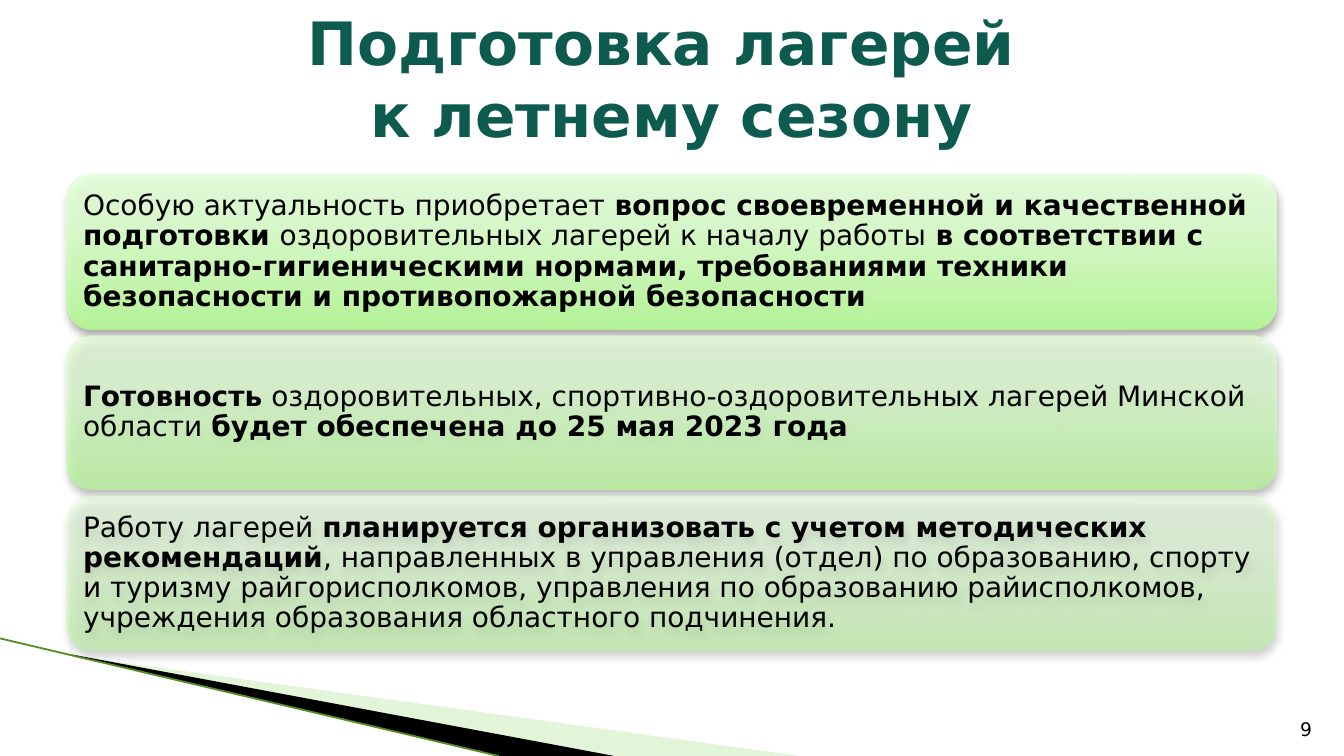
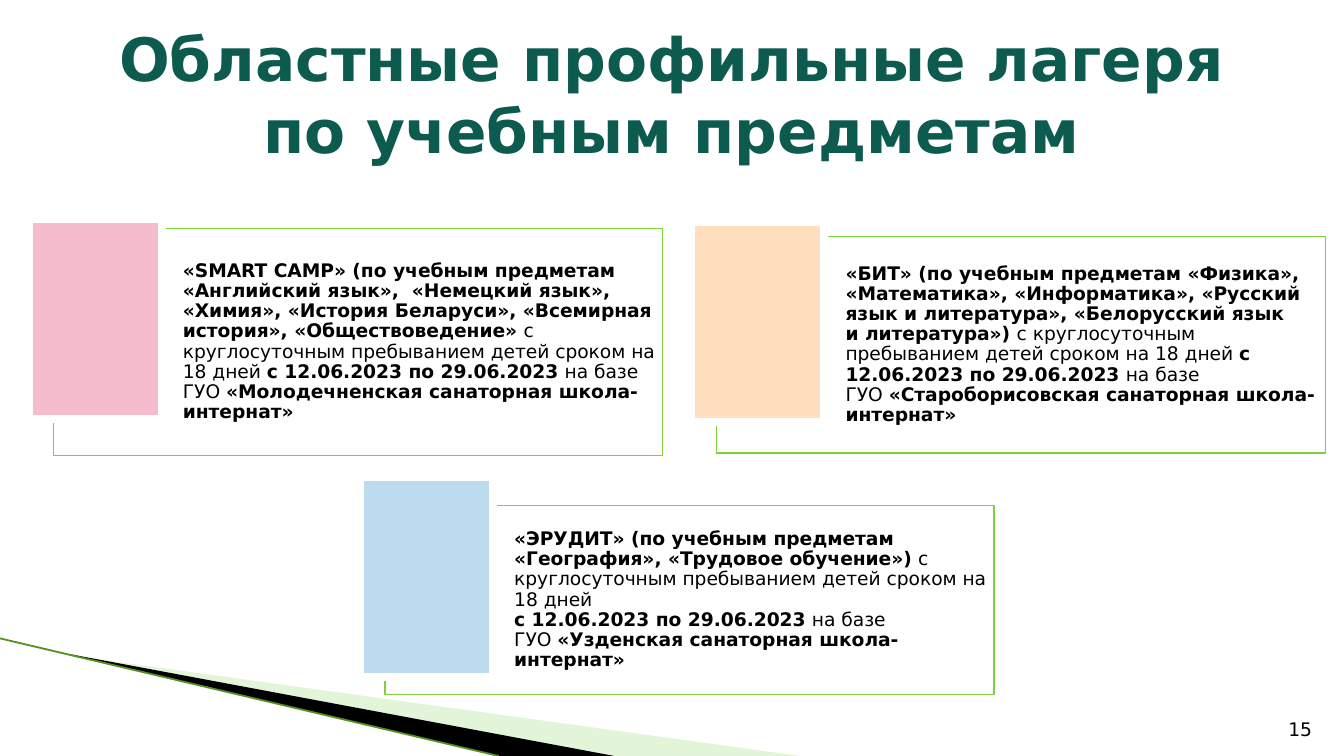
from copy import deepcopy
from pptx import Presentation
from pptx.dml.color import RGBColor
from pptx.enum.shapes import MSO_CONNECTOR as LINK, MSO_SHAPE as SHAPE
from pptx.enum.text import MSO_ANCHOR as ANCHOR, MSO_AUTO_SIZE as FIT, PP_ALIGN as ALIGN
from pptx.oxml import parse_xml
from pptx.oxml.ns import nsdecls, qn
from pptx.util import Pt

FONT = "DejaVu Sans"
HUE = {
    "title": "0D5A4F", "text": "000000", "white": "FFFFFF", "edge": "7FD13B",
    "light": "B8E7A1", "dark": "000000", "line": "568F24",
    "pink": "F5BDCB", "peach": "FFDFBD", "sky": "BDDBEE",
}
STOPS = [(0, "B5FA95"), (65, "DBFFCC"), (100, "E5FFDB")]

PREP = {
    "title": "Подготовка лагерей \nк летнему сезону",
    "top": 8, "page": "9",
    "bars": [
        (90, "Особую актуальность приобретает *вопрос своевременной и качественной подготовки *"
             "оздоровительных лагерей к началу работы *в соответствии с санитарно-гигиеническими "
             "нормами, требованиями техники безопасности и противопожарной безопасности*"),
        (70, "*Готовность* оздоровительных, спортивно-оздоровительных лагерей Минской области "
             "*будет обеспечена до 25 мая 2023 года*"),
        (50, "Работу лагерей *планируется организовать с учетом методических рекомендаций*, "
             "направленных в управления (отдел) по образованию, спорту и туризму "
             "райгорисполкомов, управления по образованию райисполкомов, учреждения "
             "образования областного подчинения."),
    ],
}
CAMPS = {
    "title": "Областные профильные лагеря по учебным предметам",
    "top": 16.5, "page": "15",
    "cards": [
        (0, 183.2, 121.7, "pink",
         "*«SMART CAMP» (по учебным предметам «Английский язык»,  «Немецкий язык», «Химия», "
         "«История Беларуси», «Всемирная история», «Обществоведение» *"
         "с круглосуточным пребыванием детей сроком на 18 дней *с 12.06.2023 по 29.06.2023 *"
         "на базе \nГУО *«Молодечненская санаторная школа-интернат»*"),
        (1, 184.7, 115.9, "peach",
         "*«БИТ» (по учебным предметам «Физика», «Математика», «Информатика», «Русский язык "
         "и литература», «Белорусский язык \nи литература») *"
         "с круглосуточным пребыванием детей сроком на 18 дней *с 12.06.2023 по 29.06.2023 *"
         "на базе \nГУО *«Староборисовская санаторная школа-интернат»*"),
        (0.5, 321.5, 101.5, "sky",
         "*«ЭРУДИТ» (по учебным предметам «География», «Трудовое обучение») *"
         "с круглосуточным пребыванием детей сроком на 18 дней \n*с 12.06.2023 по 29.06.2023 *"
         "на базе \nГУО *«Узденская санаторная школа-интернат»*"),
    ],
}

WEDGES = [
    ("light", 40, [(39.6, 351.4), (428.4, 405), (328.3, 405)]),
    ("dark", 100, [(38.2, 350.6), (329, 405), (267.8, 405), (38.9, 351.4)]),
]


def rgb(key):
    return RGBColor.from_string(HUE[key])


def box(x, y, w, h):
    return Pt(x), Pt(y), Pt(w), Pt(h)


def paint(shape, key, alpha=100, edge=None, width=0):
    shape.shadow.inherit = False
    shape.fill.solid()
    shape.fill.fore_color.rgb = rgb(key)
    if alpha < 100:
        tone = shape._element.spPr.find(qn("a:solidFill"))[0]
        tone.append(parse_xml(f'<a:alpha {nsdecls("a")} val="{alpha * 1000}"/>'))
    if edge:
        shape.line.color.rgb = rgb(edge)
        shape.line.width = Pt(width)
    else:
        shape.line.fill.background()


def glow(shape, alpha):
    props = shape._element.spPr
    stops = "".join(
        f'<a:gs pos="{pos * 1000}"><a:srgbClr val="{tone}">'
        f'<a:alpha val="{alpha * 1000}"/></a:srgbClr></a:gs>' for pos, tone in STOPS)
    grad = parse_xml(
        f'<a:gradFill {nsdecls("a")} rotWithShape="1"><a:gsLst>{stops}</a:gsLst>'
        '<a:lin ang="16200000" scaled="0"/></a:gradFill>')
    props.replace(props.find(qn("a:solidFill")), grad)
    props.find(qn("a:effectLst")).append(parse_xml(
        f'<a:outerShdw {nsdecls("a")} blurRad="{Pt(4)}" dist="{Pt(3)}" dir="5400000" '
        'rotWithShape="0"><a:srgbClr val="000000"><a:alpha val="35000"/></a:srgbClr>'
        '</a:outerShdw>'))


def write(shape, text, size, key="text", align=ALIGN.LEFT, anchor=ANCHOR.MIDDLE,
          pads=None, space=None):
    frame = shape.text_frame
    frame.word_wrap = True
    frame.auto_size = FIT.NONE
    frame.vertical_anchor = anchor
    if pads:
        (frame.margin_left, frame.margin_top,
         frame.margin_right, frame.margin_bottom) = map(Pt, pads)
    par = frame.paragraphs[0]
    par.alignment = align
    if space:
        par.line_spacing = space
    for i, part in enumerate(text.split("*")):
        for j, row in enumerate(part.split("\n")):
            if j:
                par.add_line_break()
            if row:
                run = par.add_run()
                run.text = row
                run.font.name = FONT
                run.font.size = Pt(size)
                run.font.bold = i % 2 == 1
                run.font.color.rgb = rgb(key)
    for brk in par._p.findall(qn("a:br")):
        brk.append(deepcopy(par.runs[0]._r.rPr))


def start(deck, data):
    slide = deck.slides.add_slide(deck.slide_layouts[5])
    shapes = slide.shapes
    for key, alpha, dots in WEDGES:
        dots = [(Pt(x), Pt(y)) for x, y in dots]
        pen = shapes.build_freeform(*dots[0])
        pen.add_line_segments(dots[1:], close=True)
        paint(pen.convert_to_shape(), key, alpha)
    line = shapes.add_connector(LINK.STRAIGHT, *box(0, 342, 267, 405))
    line.line.color.rgb = rgb("line")
    line.line.width = Pt(0.95)
    line._element.spPr.append(parse_xml(f'<a:effectLst {nsdecls("a")}/>'))
    title = shapes.title
    title.left, title.top, title.width, title.height = box(36, data["top"], 648, 67.5)
    write(title, f'*{data["title"]}*', 32, "title", ALIGN.CENTER)
    page = shapes.add_textbox(*box(681, 378.5, 29, 21.5))
    write(page, data["page"], 10, align=ALIGN.RIGHT, anchor=ANCHOR.BOTTOM)
    return shapes


def prep(deck):
    shapes = start(deck, PREP)
    for i, (alpha, text) in enumerate(PREP["bars"]):
        bar = shapes.add_shape(SHAPE.ROUNDED_RECTANGLE, *box(36, 93.6 + 86.1 * i, 648, 82.8))
        paint(bar, "light")
        glow(bar, alpha)
        write(bar, text, 15, pads=(4.5, 4.5, 4.5, 4.5), space=0.9)


def camps(deck):
    shapes = start(deck, CAMPS)
    for col, mid, high, key, text in CAMPS["cards"]:
        left = 28.8 + 355 * col
        card = shapes.add_shape(SHAPE.RECTANGLE, *box(left, mid - high / 2, 326.2, high))
        paint(card, "white", 40, "edge", 0.75)
        write(card, text, 10, pads=(69.2, 3, 3, 3), space=0.9)
        tile = shapes.add_shape(SHAPE.RECTANGLE, *box(left - 13.5, mid - 65.8, 71.3, 107.2))
        paint(tile, key, edge="white", width=4.33)


def main():
    deck = Presentation()
    deck.slide_width, deck.slide_height = Pt(720), Pt(405)
    prep(deck)
    camps(deck)
    deck.save("out.pptx")


if __name__ == "__main__":
    main()
